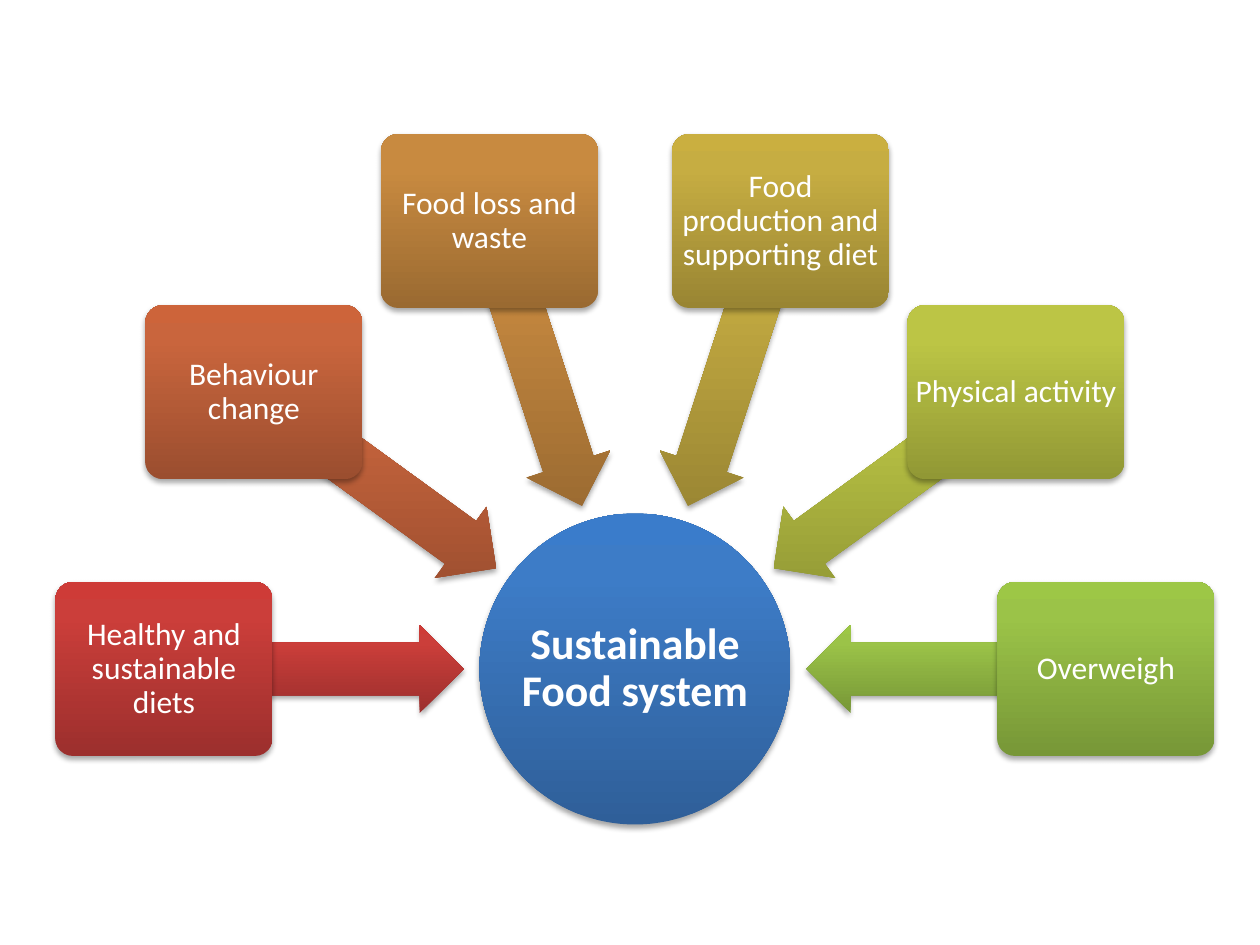
"""Builds a slide with six themes pointing at a sustainable food system hub."""
from copy import deepcopy
from math import cos, radians, sin

from lxml.etree import SubElement
from pptx import Presentation
from pptx.dml.color import RGBColor
from pptx.enum.shapes import MSO_SHAPE as Shape
from pptx.enum.text import MSO_ANCHOR as Anchor, PP_ALIGN as Align
from pptx.oxml.ns import qn
from pptx.util import Emu, Pt

PX = 914400 / 126
WHITE = RGBColor(0xFF, 0xFF, 0xFF)


def shades(*codes):
    return [RGBColor.from_string(code) for code in codes]


BLUE = shades("2F5F99", "3D7CC7", "3A7CCB")
RED = shades("9C2F2D", "CB3E3A", "CE3B37")
RUST = shades("9B4E2F", "C9653D", "CD643A")
ORANGE = shades("9A6A31", "C88A40", "CB8B3D")
GOLD = shades("998533", "C6AD42", "CAAF40")
OLIVE = shades("919835", "BCC545", "BFC843")
GREEN = shades("779737", "9BC348", "9DC746")

THEMES = [
    ("Healthy and sustainable diets", RED),
    ("Behaviour change", RUST),
    ("Food loss and waste", ORANGE),
    ("Food production and supporting diet", GOLD),
    ("Physical activity", OLIVE),
    ("Overweigh", GREEN),
]
HUB_X, HUB_Y, HUB_SIZE = 635, 669, 311
CARD_RADIUS, ARROW_RADIUS = 471, 321


def px(value):
    return Emu(round(value * PX))


def write(tf, text, size=18, bold=False, color=WHITE, font="Calibri", margin=0):
    tf.word_wrap = True
    tf.vertical_anchor = Anchor.MIDDLE
    tf.margin_left = tf.margin_right = px(margin)
    tf.margin_top = tf.margin_bottom = 0
    p = tf.paragraphs[0]
    p.alignment = Align.CENTER
    p.line_spacing = 0.9
    r = p.add_run()
    r.text = text
    r.font.name, r.font.size, r.font.bold = font, Pt(size), bold
    r.font.color.rgb = color


class Diagram:
    def __init__(self, slide):
        self.s = slide

    def box(self, x, y, w, h):
        return px(x - w / 2), px(y - h / 2), px(w), px(h)

    def shape(self, kind, x, y, w, h, colors, adjustments=()):
        sp = self.s.shapes.add_shape(kind, *self.box(x, y, w, h))
        for i, value in enumerate(adjustments):
            sp.adjustments[i] = value
        sp.line.fill.background()
        self.gradient(sp, colors)
        self.shadow(sp)
        return sp

    def gradient(self, sp, colors):
        sp.fill.gradient()
        sp.fill.gradient_angle = 90
        grad = sp._element.spPr.find(qn("a:gradFill"))
        grad.set("rotWithShape", "0")
        stops = grad.find(qn("a:gsLst"))
        stops.append(deepcopy(stops[0]))
        for stop, position, color in zip(sp.fill.gradient_stops, (0, 0.8, 1), colors):
            stop.position = position
            stop.color.rgb = color

    def shadow(self, sp):
        sp.shadow.inherit = False
        effects = sp._element.spPr.find(qn("a:effectLst"))
        outer = SubElement(effects, qn("a:outerShdw"), blurRad="40000",
                           dist="23000", dir="5400000", rotWithShape="0")
        color = SubElement(outer, qn("a:srgbClr"), val="000000")
        SubElement(color, qn("a:alpha"), val="35000")

    def hub(self, text):
        place = HUB_X, HUB_Y, HUB_SIZE, HUB_SIZE
        self.shape(Shape.OVAL, *place, BLUE)
        label = self.s.shapes.add_textbox(*self.box(*place))
        write(label.text_frame, text, size=25, bold=True, margin=30)

    def arrow(self, x, y, angle, colors):
        sp = self.shape(Shape.LEFT_ARROW, x, y, 299, 88, colors, (0.6, 0.5))
        sp.rotation = angle

    def card(self, x, y, text, colors):
        sp = self.shape(Shape.ROUNDED_RECTANGLE, x, y, 217, 174, colors, (0.1,))
        write(sp.text_frame, text)


def around_hub(radius, angle):
    turn = radians(angle)
    return HUB_X + radius * cos(turn), HUB_Y + radius * sin(turn)


def main():
    prs = Presentation()
    prs.slide_width, prs.slide_height = px(1260), px(945)
    diagram = Diagram(prs.slides.add_slide(prs.slide_layouts[6]))
    diagram.hub("Sustainable Food system")
    step = 180 / (len(THEMES) - 1)
    for i, (text, colors) in enumerate(THEMES):
        angle = 180 + i * step
        diagram.arrow(*around_hub(ARROW_RADIUS, angle), angle, colors)
        diagram.card(*around_hub(CARD_RADIUS, angle), text, colors)
    prs.save("out.pptx")


if __name__ == "__main__":
    main()
